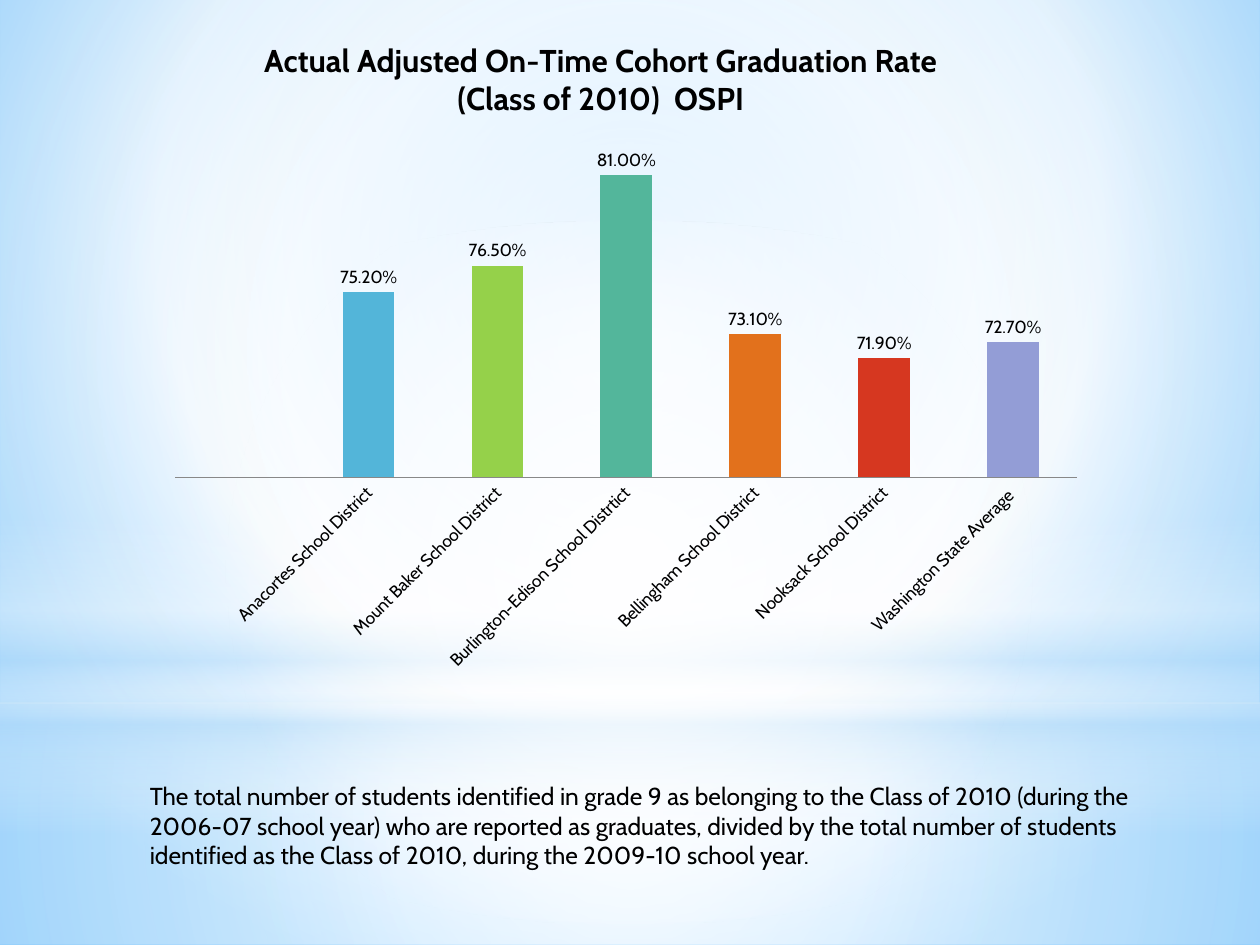
"""Build a slide with a column chart of graduation rates and a note below it."""
import lxml.etree
import pptx
import pptx.chart.data
import pptx.dml.color
import pptx.enum.chart
import pptx.enum.shapes
import pptx.oxml.ns
import pptx.util

Inches = pptx.util.Inches
RGB = pptx.dml.color.RGBColor
qn = pptx.oxml.ns.qn
Kind = pptx.enum.shapes.MSO_SHAPE

FONT = "Cabin"
BLACK = RGB(0, 0, 0)
WHITE = RGB(0xFF, 0xFF, 0xFF)
PALE = RGB(0xB4, 0xDC, 0xFA)
SKY = RGB(0x9E, 0xD5, 0xFF)
DEEP = RGB(0x5B, 0xB9, 0xFF)
GRAY = RGB(0x88, 0x88, 0x88)
BLUE = RGB(0x53, 0xB5, 0xD9)
GREEN = RGB(0x95, 0xD1, 0x4A)
TEAL = RGB(0x53, 0xB6, 0x9B)
ORANGE = RGB(0xE2, 0x71, 0x1C)
RED = RGB(0xD6, 0x37, 0x20)
PURPLE = RGB(0x93, 0x9D, 0xD6)
WIDE, HIGH = Inches(7.46), Inches(5.17)


def shade(fill, host, stops, focus=None):
    fill.gradient()
    grad = host.find(".//" + qn("a:gradFill"))
    for child in list(grad):
        grad.remove(child)
    group = lxml.etree.SubElement(grad, qn("a:gsLst"))
    for spot, color, alpha in stops:
        stop = lxml.etree.SubElement(group, qn("a:gs"), pos=str(spot * 1000))
        tint = lxml.etree.SubElement(stop, qn("a:srgbClr"), val=str(color))
        if alpha < 100:
            lxml.etree.SubElement(tint, qn("a:alpha"), val=str(alpha * 1000))
    if focus:
        ring = lxml.etree.SubElement(grad, qn("a:path"), path="circle")
        sides = {side: str(part * 1000) for side, part in zip("ltrb", focus)}
        lxml.etree.SubElement(ring, qn("a:fillToRect"), **sides)
    else:
        lxml.etree.SubElement(grad, qn("a:lin"), ang="5400000", scaled="0")


def place(host, index, **sizes):
    for old in host.findall(qn("c:layout")):
        host.remove(old)
    layout = lxml.etree.Element(qn("c:layout"))
    manual = lxml.etree.SubElement(layout, qn("c:manualLayout"))
    if "w" in sizes:
        lxml.etree.SubElement(manual, qn("c:layoutTarget"), val="inner")
    for mode in ("xMode", "yMode"):
        lxml.etree.SubElement(manual, qn("c:" + mode), val="edge")
    for name, size in sizes.items():
        share = size / (WIDE if name in "xw" else HIGH)
        lxml.etree.SubElement(manual, qn("c:" + name), val=str(share))
    host.insert(index, layout)


deck = pptx.Presentation()
deck.slide_width, deck.slide_height = Inches(10), Inches(7.5)
slide = deck.slides.add_slide(deck.slide_layouts[6])
shade(slide.background.fill, slide._element,
      [(0, SKY, 100), (60, WHITE, 100), (100, DEEP, 100)], (20, 10, 20, 60))

CENTER = (50, 50, 50, 50)
glows = [
    (Kind.RECTANGLE, 5.58, 1.92,
     [(0, WHITE, 91), (37, WHITE, 76), (100, PALE, 79)], CENTER),
    (Kind.RECTANGLE, 0, 5.58,
     [(0, WHITE, 89), (48, WHITE, 62), (100, PALE, 79)], CENTER),
    (Kind.RECTANGLE, 4.12, 2.5,
     [(0, WHITE, 0), (29, WHITE, 30), (45, PALE, 40), (55, WHITE, 26),
      (65, PALE, 60), (100, WHITE, 0)], None),
    (Kind.OVAL, 1.75, 5.58, [(0, WHITE, 100), (56, WHITE, 0)], CENTER),
]
for kind, top, height, stops, focus in glows:
    glow = slide.shapes.add_shape(kind, 0, Inches(top), Inches(10), Inches(height))
    glow.shadow.inherit = False
    glow.line.fill.background()
    shade(glow.fill, glow._element, stops, focus)

rates = [
    ("", None, PURPLE),
    ("Anacortes School District", 0.752, BLUE),
    ("Mount Baker School District", 0.765, GREEN),
    ("Burlington-Edison School Distrtict", 0.81, TEAL),
    ("Bellingham School District", 0.731, ORANGE),
    ("Nooksack School District", 0.719, RED),
    ("Washington State Average ", 0.727, PURPLE),
]
data = pptx.chart.data.CategoryChartData(number_format="0.00%")
data.categories = [name for name, rate, color in rates]
data.add_series("Series 1", [rate for name, rate, color in rates])
chart = slide.shapes.add_chart(
    pptx.enum.chart.XL_CHART_TYPE.COLUMN_CLUSTERED,
    Inches(1.24), Inches(0.26), WIDE, HIGH, data).chart
chart.font.name = FONT
chart.font.size = pptx.util.Pt(10)
chart.font.color.rgb = BLACK
chart.has_legend = False

chart.has_title = True
title = chart.chart_title
title.text_frame.text = "Actual Adjusted On-Time Cohort Graduation Rate (Class of 2010)  OSPI"
font = title.text_frame.paragraphs[0].runs[0].font
font.name, font.size, font.bold = FONT, pptx.util.Pt(18), True
font.color.rgb = BLACK
place(title._element, 1, x=Inches(0.81), y=Inches(-0.01))
place(chart._chartSpace.find(".//" + qn("c:plotArea")), 0,
      x=Inches(0.15), y=Inches(0.97), w=Inches(7.16), h=Inches(2.56))

scale = chart.value_axis
scale.minimum_scale, scale.maximum_scale = 0.66, 0.82
scale.has_major_gridlines = False
scale.tick_labels.number_format = "0.00%"
scale.tick_labels.number_format_is_linked = False
scale.visible = False

base = chart.category_axis
base.major_tick_mark = pptx.enum.chart.XL_TICK_MARK.NONE
base.format.line.color.rgb = GRAY
base.format.line.width = pptx.util.Pt(0)
base.tick_labels.font.size = pptx.util.Pt(10)
base._element.find(qn("c:txPr")).find(qn("a:bodyPr")).set("rot", "-2700000")

plot = chart.plots[0]
plot.gap_width, plot.overlap = 150, -25
plot.vary_by_categories = True
bars = plot.series[0]
for index, (name, rate, color) in enumerate(rates):
    fill = bars.points[index].format.fill
    fill.solid()
    fill.fore_color.rgb = color
labels = bars.data_labels
labels.show_value = True
labels.number_format = "0.00%"
labels.number_format_is_linked = False
labels.position = pptx.enum.chart.XL_LABEL_POSITION.OUTSIDE_END

note = slide.shapes.add_textbox(Inches(1.09), Inches(6.15), Inches(8.35), Inches(0.81))
frame = note.text_frame
frame.word_wrap = True
frame.text = (
    "The total number of students identified in grade 9 as belonging to the Class of 2010 "
    "(during the 2006-07 school year) who are reported as graduates, divided by the total "
    "number of students identified as the Class of 2010, during the 2009-10 school year.")
font = frame.paragraphs[0].runs[0].font
font.name, font.size = FONT, pptx.util.Pt(14)
font.color.rgb = BLACK

deck.save("out.pptx")
